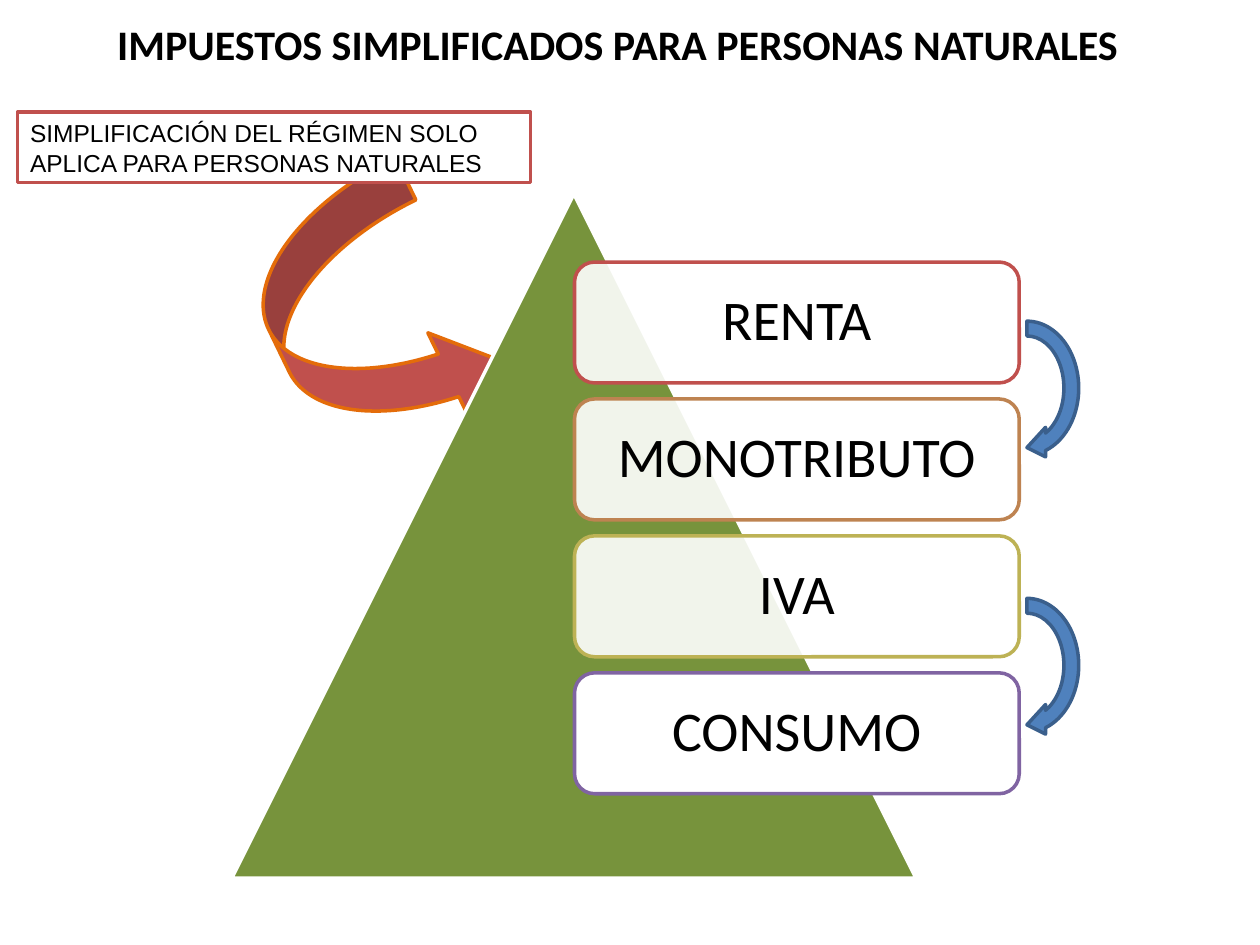
"""Build the slide on simplified taxes for natural persons."""
from lxml import etree
from pptx import Presentation
from pptx.dml.color import RGBColor
from pptx.enum.shapes import MSO_SHAPE
from pptx.enum.text import MSO_ANCHOR, MSO_AUTO_SIZE, PP_ALIGN
from pptx.oxml.ns import qn
from pptx.util import Inches, Pt

CURVED_ARROW = MSO_SHAPE.CURVED_RIGHT_ARROW
CIRCULAR_ARROW = MSO_SHAPE.CIRCULAR_ARROW
RECTANGLE = MSO_SHAPE.RECTANGLE
ROUNDED_RECTANGLE = MSO_SHAPE.ROUNDED_RECTANGLE
TRIANGLE = MSO_SHAPE.ISOSCELES_TRIANGLE
TOP, MIDDLE = MSO_ANCHOR.TOP, MSO_ANCHOR.MIDDLE
LEFT, CENTER = PP_ALIGN.LEFT, PP_ALIGN.CENTER
NO_AUTOFIT = MSO_AUTO_SIZE.NONE

BLACK = RGBColor(0x00, 0x00, 0x00)
WHITE = RGBColor(0xFF, 0xFF, 0xFF)
RED = RGBColor(0xC0, 0x50, 0x4D)
ORANGE = RGBColor(0xE4, 0x6C, 0x0A)
GREEN = RGBColor(0x77, 0x93, 0x3C)
BROWN = RGBColor(0xBE, 0x83, 0x51)
OLIVE = RGBColor(0xBD, 0xB2, 0x55)
PURPLE = RGBColor(0x80, 0x64, 0xA2)
BLUE = RGBColor(0x4F, 0x81, 0xBD)
DARK_BLUE = RGBColor(0x3A, 0x5F, 0x8C)

TAXES = [("RENTA", RED, 90), ("MONOTRIBUTO", BROWN, 90), ("IVA", OLIVE, 90), ("CONSUMO", PURPLE, 100)]
FIRST_TAX_TOP, LAST_TAX_TOP = 2.08, 5.34
TAX_PITCH = (LAST_TAX_TOP - FIRST_TAX_TOP) / (len(TAXES) - 1)

presentation = Presentation()
presentation.slide_width = Inches(10)
presentation.slide_height = Inches(7.5)
slide = presentation.slides.add_slide(presentation.slide_layouts[5])


def add_outlined_shape(kind, left, top, width, height, fill, line, rotation=0):
    shape = slide.shapes.add_shape(kind, Inches(left), Inches(top), Inches(width), Inches(height))
    shape.shadow.inherit = False
    shape.fill.solid()
    shape.fill.fore_color.rgb = fill
    shape.line.color.rgb = line
    shape.line.width = Pt(2)
    shape.rotation = rotation
    return shape


def write_text(shape, text, font_name, size, alignment, anchor, bold=False):
    text_frame = shape.text_frame
    text_frame.text = text
    text_frame.word_wrap = True
    text_frame.auto_size = NO_AUTOFIT
    text_frame.vertical_anchor = anchor
    paragraph = text_frame.paragraphs[0]
    paragraph.alignment = alignment
    font = paragraph.runs[0].font
    font.name = font_name
    font.size = Pt(size)
    font.bold = bold
    font.color.rgb = BLACK
    return text_frame


title = slide.shapes.title
title.left, title.top = Inches(0.83), Inches(0.1)
title.width, title.height = Inches(8.2), Inches(0.5)
title_frame = write_text(title, "IMPUESTOS SIMPLIFICADOS PARA PERSONAS NATURALES", "Calibri", 24, LEFT, TOP, True)
title_frame.word_wrap = False

add_outlined_shape(CURVED_ARROW, 2.18, 1.47, 1.5, 2.14, RED, ORANGE, 334.1)
note = add_outlined_shape(RECTANGLE, 0.14, 0.89, 4.07, 0.56, WHITE, RED)
write_text(note, "SIMPLIFICACIÓN DEL RÉGIMEN SOLO APLICA PARA PERSONAS NATURALES", "Arial", 14, LEFT, TOP)
add_outlined_shape(TRIANGLE, 1.84, 1.54, 5.43, 5.43, GREEN, WHITE)

for index, (tax, color, opacity) in enumerate(TAXES):
    top = FIRST_TAX_TOP + index * TAX_PITCH
    box = add_outlined_shape(ROUNDED_RECTANGLE, 4.56, top, 3.53, 0.96, WHITE, color)
    fill_color = box.fill._xPr.find(qn("a:solidFill"))[0]
    etree.SubElement(fill_color, qn("a:alpha"), val=str(opacity * 1000))
    tax_frame = write_text(box, tax, "Calibri", 32, CENTER, MIDDLE)
    tax_frame.paragraphs[0].line_spacing = 0.9

for top in (2.61, 4.81):
    add_outlined_shape(CIRCULAR_ARROW, 7.56, top, 1.18, 0.94, BLUE, DARK_BLUE, 90)

presentation.save("out.pptx")
